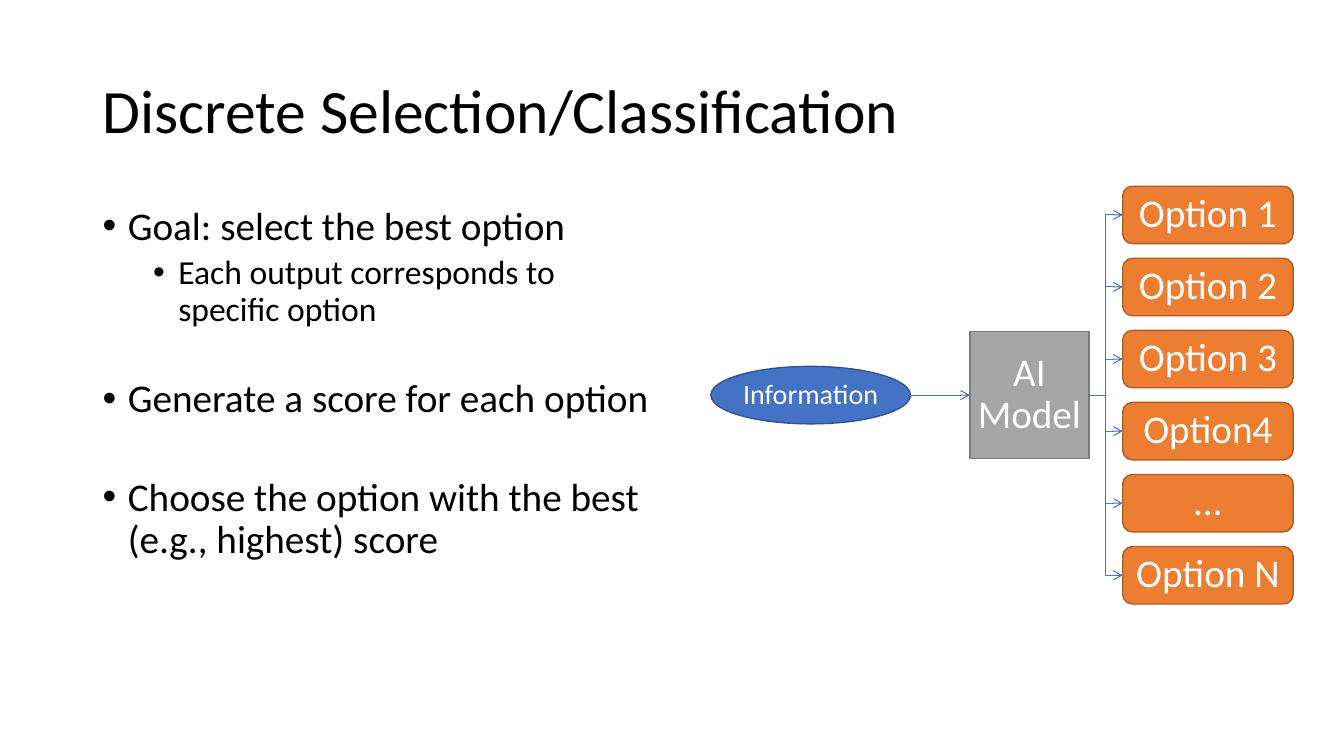
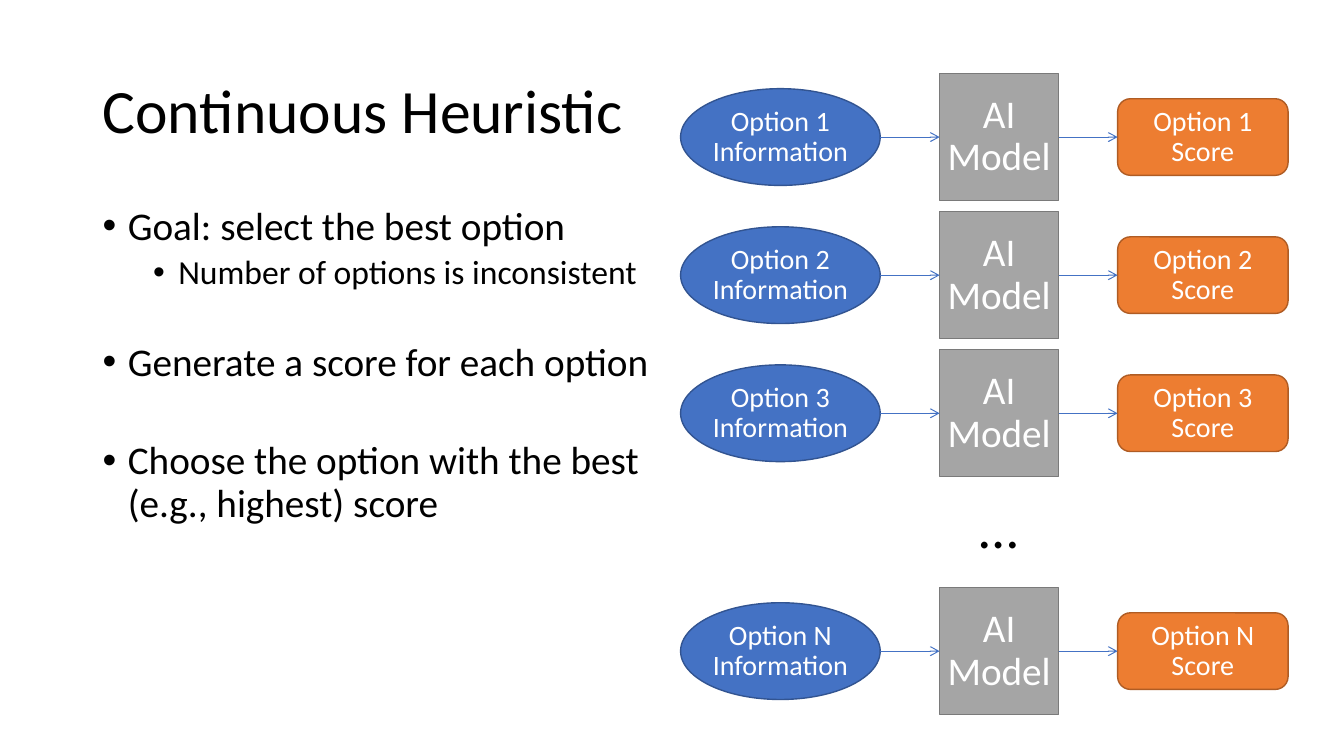
from lxml.etree import SubElement
from pptx import Presentation
from pptx.dml.color import RGBColor
from pptx.enum.shapes import MSO_CONNECTOR, MSO_SHAPE
from pptx.enum.text import MSO_ANCHOR, PP_ALIGN
from pptx.oxml.ns import qn
from pptx.util import Inches, Pt

# Shared style
FONT = "Calibri"
BLACK, WHITE, BLUE = "000000", "FFFFFF", "4472C4"
LEFT_MARGIN = 0.92
LEVEL_INDENT, HANGING = 0.5, 0.25
LINE_SPACING = 0.9
NODE_INSET = 0.03

# Node kinds: outline, width, height, fill, border
INFORMATION = (MSO_SHAPE.OVAL, 1.98, 0.57, BLUE, "325491")
MODEL = (MSO_SHAPE.RECTANGLE, 1.18, 1.26, "A5A5A5", "7A7A7A")
OUTCOME = (MSO_SHAPE.ROUNDED_RECTANGLE, 1.69, 0.57, "ED7D31", "AF5C24")

# Bullets: text, level, size, space before
CLOSING_BULLETS = [
    ("Generate a score for each option", 0, 28, 36),
    ("Choose the option with the best (e.g., highest) score", 0, 28, 40),
]


def rgb(value):
    return RGBColor.from_string(value)


def add_text(frame, text, size=28, color=BLACK, align=PP_ALIGN.LEFT,
             before=0, spacing=LINE_SPACING, level=None):
    """Write one paragraph; a level makes it a bullet."""
    paragraph = frame.paragraphs[0]
    if paragraph.runs:
        paragraph = frame.add_paragraph()
    paragraph.alignment = align
    paragraph.line_spacing = spacing
    paragraph.space_before = Pt(before)
    run = paragraph.add_run()
    run.text = text
    run.font.name = FONT
    run.font.size = Pt(size)
    run.font.color.rgb = rgb(color)
    if level is not None:
        paragraph.level = level
        properties = paragraph._p.get_or_add_pPr()
        properties.set("marL", str(Inches(level * LEVEL_INDENT + HANGING)))
        properties.set("indent", str(Inches(-HANGING)))
        SubElement(properties, qn("a:buFont"), typeface="Arial")
        SubElement(properties, qn("a:buChar"), char="•")


def add_frame(slide, left, top, width, height, anchor=MSO_ANCHOR.TOP):
    box = slide.shapes.add_textbox(*map(Inches, (left, top, width, height)))
    frame = box.text_frame
    frame.word_wrap = True
    frame.vertical_anchor = anchor
    return frame


def add_node(slide, kind, text, center_x, center_y, size=28, height=None):
    """Draw a node about its centre; a height replaces that of its kind."""
    outline, width, usual_height, fill, border = kind
    height = height or usual_height
    node = slide.shapes.add_shape(
        outline, Inches(center_x - width / 2), Inches(center_y - height / 2),
        Inches(width), Inches(height))
    node.shadow.inherit = False
    node.fill.solid()
    node.fill.fore_color.rgb = rgb(fill)
    node.line.color.rgb = rgb(border)
    node.line.width = Pt(1)
    frame = node.text_frame
    frame.word_wrap = True
    frame.vertical_anchor = MSO_ANCHOR.MIDDLE
    frame.margin_left = frame.margin_right = Inches(NODE_INSET)
    frame.margin_top = frame.margin_bottom = Inches(NODE_INSET)
    add_text(frame, text, size, WHITE, PP_ALIGN.CENTER)
    return node


def add_arrow(slide, source, target, route=MSO_CONNECTOR.STRAIGHT):
    """Join the right side of source to the left side of target."""
    arrow = slide.shapes.add_connector(
        route, source.left + source.width, source.top + source.height // 2,
        target.left, target.top + target.height // 2)
    if source.auto_shape_type != MSO_SHAPE.OVAL:  # ovals number sites differently
        arrow.begin_connect(source, 3)
    arrow.end_connect(target, 1)
    arrow.line.color.rgb = rgb(BLUE)
    arrow.line.width = Pt(0.75)
    SubElement(arrow.line._get_or_add_ln(), qn("a:tailEnd"), type="arrow")
    SubElement(arrow._element.spPr, qn("a:effectLst"))


def add_content_slide(deck, title, detail):
    slide = deck.slides.add_slide(deck.slide_layouts[6])
    heading = add_frame(slide, LEFT_MARGIN, 0.4, 11.5, 1.45, MSO_ANCHOR.MIDDLE)
    add_text(heading, title, 44)
    body = add_frame(slide, LEFT_MARGIN, 2, 5.67, 4.76)
    bullets = [("Goal: select the best option", 0, 28, 0), (detail, 1, 24, 5)]
    for text, level, size, before in bullets + CLOSING_BULLETS:
        add_text(body, text, size, before=before, level=level)
    return slide


def add_classification(deck):
    slide = add_content_slide(deck, "Discrete Selection/Classification",
                              "Each output corresponds to specific option")
    options = ["Option 1", "Option 2", "Option 3", "Option4", "…", "Option N"]
    middle, row_pitch = 3.92, 0.715
    first_row = middle - row_pitch * (len(options) - 1) / 2

    information = add_node(slide, INFORMATION, "Information", 8.04, middle, 20)
    model = add_node(slide, MODEL, "AI Model", 10.21, middle)
    add_arrow(slide, information, model)
    for row, label in enumerate(options):
        option = add_node(slide, OUTCOME, label, 11.98, first_row + row * row_pitch)
        add_arrow(slide, model, option, MSO_CONNECTOR.ELBOW)


def add_heuristic(deck):
    slide = add_content_slide(deck, "Continuous Heuristic",
                              "Number of options is inconsistent")
    first_row, row_pitch, last_row = 1.36, 1.37, 6.46
    model_column = 9.91
    oval_height, score_height = 0.96, 0.76  # room for two lines
    rows = [(str(n + 1), first_row + n * row_pitch) for n in range(3)]

    for number, y in rows + [("N", last_row)]:
        information = add_node(slide, INFORMATION, f"Option {number} Information",
                               7.74, y, 20, oval_height)
        model = add_node(slide, MODEL, "AI Model", model_column, y)
        score = add_node(slide, OUTCOME, f"Option {number} Score",
                         11.93, y, 20, score_height)
        add_arrow(slide, information, model)
        add_arrow(slide, model, score)

    # Rows left out
    width = MODEL[1]
    gap = add_frame(slide, model_column - width / 2, 4.83, width, 0.77,
                    MSO_ANCHOR.MIDDLE)
    add_text(gap, "…", 40, align=PP_ALIGN.CENTER, spacing=1.0)


def main():
    deck = Presentation()
    deck.slide_width, deck.slide_height = Inches(13.33), Inches(7.5)
    add_classification(deck)
    add_heuristic(deck)
    deck.save("out.pptx")


if __name__ == "__main__":
    main()
